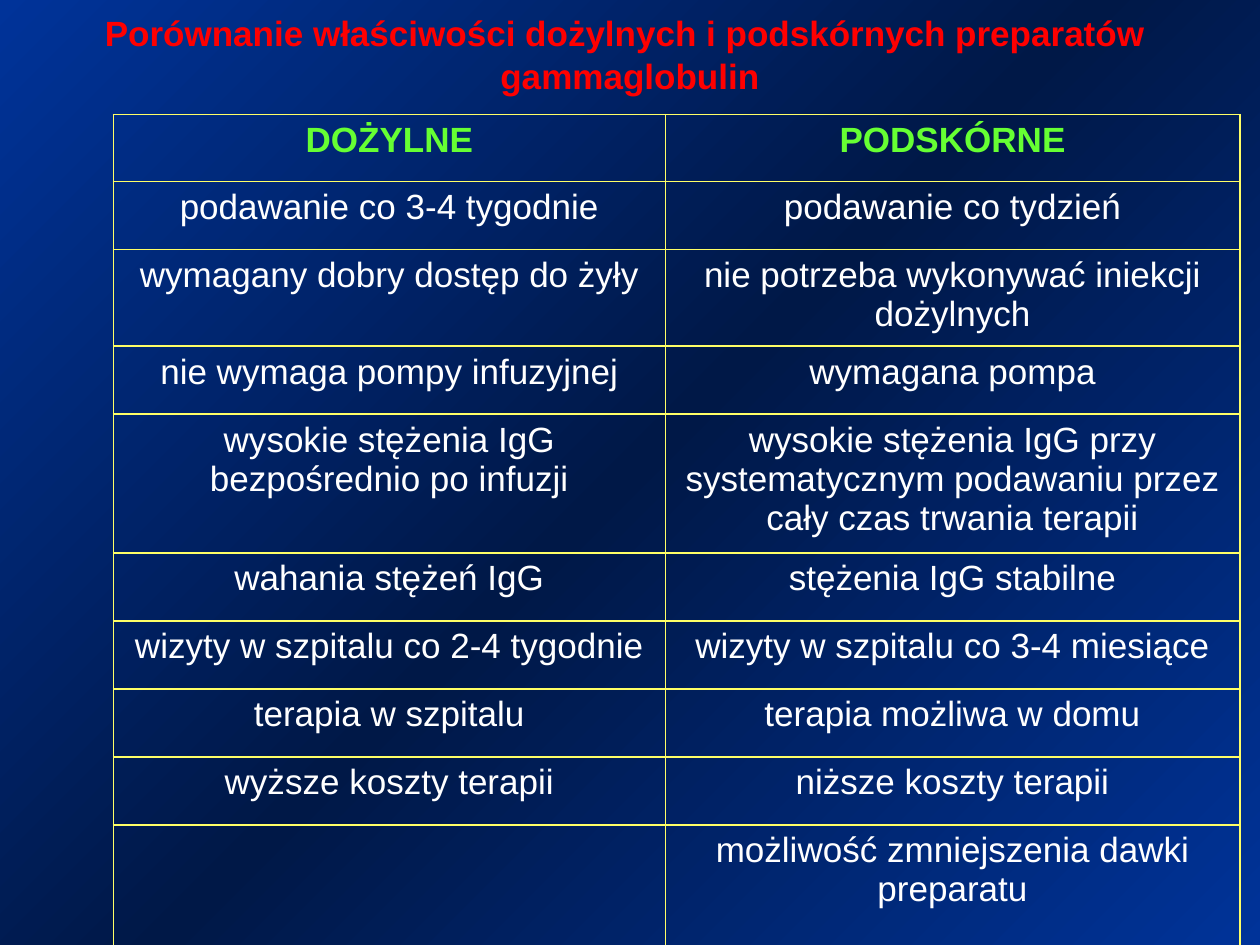
from copy import deepcopy

from lxml.etree import SubElement
from pptx import Presentation
from pptx.dml.color import RGBColor
from pptx.enum.text import MSO_ANCHOR, PP_ALIGN
from pptx.oxml.ns import qn
from pptx.util import Inches, Pt

COLORS = {
    "edge": "003399",
    "middle": "001847",
    "title": "FF0000",
    "header": "66FF33",
    "body": "FFFFFF",
    "border": "FFFF66",
}
TITLE = ["Porównanie właściwości dożylnych i podskórnych preparatów ", "gammaglobulin"]
COLUMN_WIDTHS = [4.38, 4.56]
ROWS = [
    (0.53, "DOŻYLNE", "PODSKÓRNE"),
    (0.54, "podawanie co 3-4 tygodnie", "podawanie co tydzień"),
    (0.53, "wymagany dobry dostęp do żyły", "nie potrzeba wykonywać iniekcji dożylnych"),
    (0.54, "nie wymaga pompy infuzyjnej", "wymagana pompa"),
    (
        0.89,
        "wysokie stężenia IgG bezpośrednio po infuzji",
        "wysokie stężenia IgG przy systematycznym podawaniu przez cały czas trwania terapii",
    ),
    (0.54, "wahania stężeń IgG", "stężenia IgG stabilne"),
    (0.54, "wizyty w szpitalu co 2-4 tygodnie", "wizyty w szpitalu co 3-4 miesiące"),
    (0.54, "terapia w szpitalu", "terapia możliwa w domu"),
    (0.54, "wyższe koszty terapii", "niższe koszty terapii"),
    (1.01, "", "możliwość zmniejszenia dawki preparatu"),
]


def rgb(name):
    return RGBColor.from_string(COLORS[name])


def set_background(slide):
    """Diagonal gradient, dark in the middle."""
    fill = slide.background.fill
    fill.gradient()
    fill.gradient_angle = 315
    first_stop = slide.background._cSld.find(".//" + qn("a:gs"))
    first_stop.addnext(deepcopy(first_stop))
    for stop, position, color in zip(
        fill.gradient_stops, (0, 0.5, 1), ("edge", "middle", "edge")
    ):
        stop.position = position
        stop.color.rgb = rgb(color)


def format_paragraph(paragraph, color, bold):
    paragraph.alignment = PP_ALIGN.CENTER
    font = paragraph.font
    font.name, font.size, font.bold = "Arial", Pt(20), bold
    font.color.rgb = rgb(color)


def add_title(slide):
    box = slide.shapes.add_textbox(Inches(0), Inches(0.04), Inches(10), Inches(1.1))
    frame = box.text_frame
    frame.word_wrap = True
    frame.vertical_anchor = MSO_ANCHOR.TOP
    frame.text = "\n".join(TITLE)
    for paragraph in frame.paragraphs:
        format_paragraph(paragraph, "title", True)
        paragraph.space_before = Pt(1)


def set_borders(cell):
    properties = cell._tc.get_or_add_tcPr()
    for index, side in enumerate(("a:lnL", "a:lnR", "a:lnT", "a:lnB")):
        line = properties.makeelement(qn(side), {"w": str(Pt(1))})
        solid = SubElement(line, qn("a:solidFill"))
        SubElement(solid, qn("a:srgbClr"), val=COLORS["border"])
        properties.insert(index, line)


def add_comparison_table(slide):
    table = slide.shapes.add_table(
        len(ROWS), len(COLUMN_WIDTHS), Inches(0.9), Inches(0.91),
        Inches(sum(COLUMN_WIDTHS)), Inches(sum(row[0] for row in ROWS)),
    ).table
    table.first_row = table.horz_banding = False
    for column, width in zip(table.columns, COLUMN_WIDTHS):
        column.width = Inches(width)
    for row_index, (height, *texts) in enumerate(ROWS):
        table.rows[row_index].height = Inches(height)
        is_header = row_index == 0
        for cell, text in zip(table.rows[row_index].cells, texts):
            cell.text = text
            cell.fill.background()
            set_borders(cell)
            format_paragraph(
                cell.text_frame.paragraphs[0], "header" if is_header else "body", is_header
            )


def main():
    presentation = Presentation()
    presentation.slide_width, presentation.slide_height = Inches(10), Inches(7.5)
    slide = presentation.slides.add_slide(presentation.slide_layouts[6])
    set_background(slide)
    add_title(slide)
    add_comparison_table(slide)
    presentation.save("out.pptx")


if __name__ == "__main__":
    main()
